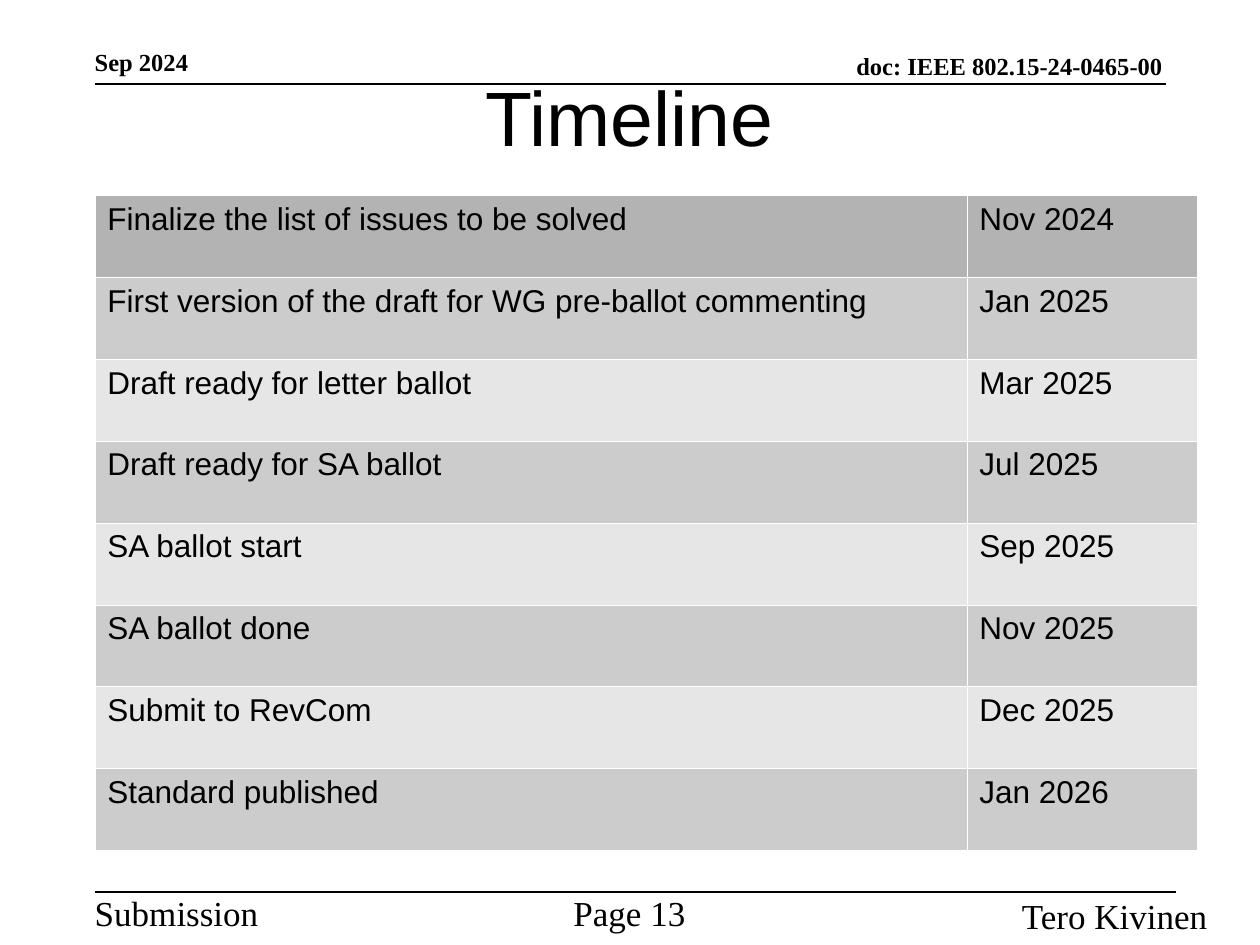
from lxml import etree
from pptx import Presentation
from pptx.dml.color import RGBColor
from pptx.enum.shapes import MSO_CONNECTOR
from pptx.enum.text import MSO_ANCHOR, MSO_AUTO_SIZE, PP_ALIGN
from pptx.oxml.ns import qn
from pptx.util import Cm, Pt

LEFT, CENTER, RIGHT = PP_ALIGN.LEFT, PP_ALIGN.CENTER, PP_ALIGN.RIGHT
TOP, MIDDLE, BOTTOM = MSO_ANCHOR.TOP, MSO_ANCHOR.MIDDLE, MSO_ANCHOR.BOTTOM
STRAIGHT = MSO_CONNECTOR.STRAIGHT
NO_AUTOFIT = MSO_AUTO_SIZE.NONE

COLORS = {
    "ink": "000000",
    "grid": "FFFFFF",
    "first_row": "B3B3B3",
    "odd_row": "CCCCCC",
    "even_row": "E6E6E6",
}
SANS, SERIF = "Arial", "Times New Roman"
MARGIN = 1.91  # left edge of header, table and footer, in cm
FOOTER_TOP = 17.98
GRID_WIDTH = Pt(0.06)

MILESTONES = [
    ("Finalize the list of issues to be solved", "Nov 2024"),
    ("First version of the draft for WG pre-ballot commenting", "Jan 2025"),
    ("Draft ready for letter ballot", "Mar 2025"),
    ("Draft ready for SA ballot", "Jul 2025"),
    ("SA ballot start", "Sep 2025"),
    ("SA ballot done", "Nov 2025"),
    ("Submit to RevCom", "Dec 2025"),
    ("Standard published", "Jan 2026"),
]


def color(name):
    return RGBColor.from_string(COLORS[name])


def write(frame, text, font, size, align=LEFT, bold=False):
    frame.text = text
    paragraph = frame.paragraphs[0]
    paragraph.alignment = align
    run_font = paragraph.runs[0].font
    run_font.name, run_font.size, run_font.bold = font, Pt(size), bold
    run_font.color.rgb = color("ink")


def set_frame(frame, anchor):
    frame.word_wrap = True
    frame.auto_size = NO_AUTOFIT
    frame.vertical_anchor = anchor
    frame.margin_left = frame.margin_right = 0
    frame.margin_top = frame.margin_bottom = 0


def add_label(slide, text, box, size, align=LEFT, anchor=TOP, bold=False):
    frame = slide.shapes.add_textbox(*map(Cm, box)).text_frame
    set_frame(frame, anchor)
    write(frame, text, SERIF, size, align, bold)


def add_rule(slide, right, y):
    rule = slide.shapes.add_connector(
        STRAIGHT, Cm(MARGIN), Cm(y), Cm(right), Cm(y))
    rule.line.color.rgb = color("ink")
    rule.line.width = Pt(1)
    etree.SubElement(rule._element.spPr, qn("a:effectLst"))


def set_title(slide, text):
    title = slide.shapes.title
    title.left, title.top = Cm(1.27), Cm(0.76)
    title.width, title.height = Cm(22.83), Cm(3.15)
    set_frame(title.text_frame, MIDDLE)
    write(title.text_frame, text, SANS, 44, CENTER)


def set_borders(cell):
    properties = cell._tc.get_or_add_tcPr()
    for position, side in enumerate(("a:lnL", "a:lnR", "a:lnT", "a:lnB")):
        border = etree.Element(qn(side), w=str(GRID_WIDTH))
        fill = etree.SubElement(border, qn("a:solidFill"))
        etree.SubElement(fill, qn("a:srgbClr"), val=COLORS["grid"])
        properties.insert(position, border)


def row_color(index):
    if index == 0:
        return color("first_row")
    return color("odd_row" if index % 2 else "even_row")


def add_milestone_table(slide):
    column_widths = (17.58, 4.65)
    row_height = 1.65
    table = slide.shapes.add_table(
        len(MILESTONES), len(column_widths), Cm(MARGIN), Cm(3.94),
        Cm(sum(column_widths)), Cm(row_height * len(MILESTONES))).table
    table.first_row = table.horz_banding = False
    for column, width in zip(table.columns, column_widths):
        column.width = Cm(width)
    for index, milestone in enumerate(MILESTONES):
        table.rows[index].height = Cm(row_height)
        for cell, text in zip(table.rows[index].cells, milestone):
            write(cell.text_frame, text, SANS, 18)
            cell.fill.solid()
            cell.fill.fore_color.rgb = row_color(index)
            set_borders(cell)


def main():
    prs = Presentation()
    prs.slide_width, prs.slide_height = Cm(25.4), Cm(19.05)
    slide = prs.slides.add_slide(prs.slide_layouts.get_by_name("Title Only"))

    # Header
    add_label(slide, "doc: IEEE 802.15-24-0465-00", (8.61, 1.09, 14.83, 0.53),
              14, RIGHT, BOTTOM, bold=True)
    add_label(slide, "Sep 2024", (MARGIN, 1.02, 7.09, 0.53),
              14, LEFT, BOTTOM, bold=True)
    add_rule(slide, 23.5, 1.7)

    # Footer
    add_rule(slide, 23.7, FOOTER_TOP)
    add_label(slide, "Submission", (MARGIN, FOOTER_TOP, 4.78, 0.79), 20)
    add_label(slide, "Page 13", (10.3, FOOTER_TOP, 4.78, 0.79), 20, CENTER)
    add_label(slide, "Tero Kivinen", (19.56, 18.03, 4.78, 0.79), 20, RIGHT)

    # Title and milestones
    set_title(slide, "Timeline")
    add_milestone_table(slide)

    prs.save("out.pptx")


if __name__ == "__main__":
    main()
